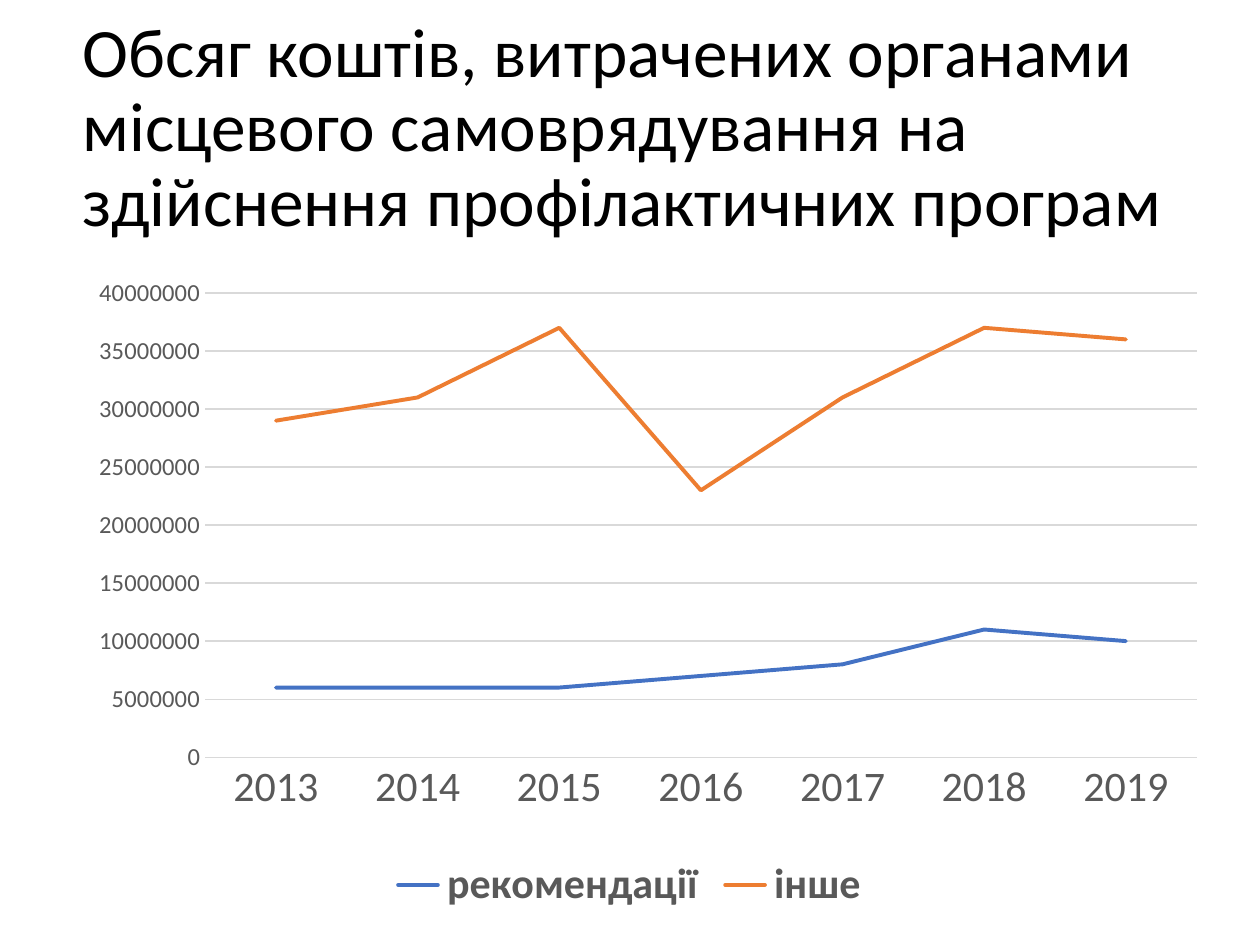
from lxml.etree import SubElement
from pptx import Presentation
from pptx.chart.data import CategoryChartData
from pptx.dml.color import RGBColor
from pptx.enum.chart import XL_CHART_TYPE, XL_LEGEND_POSITION, XL_TICK_MARK
from pptx.enum.text import MSO_ANCHOR, PP_ALIGN
from pptx.oxml.ns import qn
from pptx.util import Emu, Pt

PX_PER_INCH = 126
FONT = "Calibri"
BLACK, GREY, LIGHT_GREY = "000000", "595959", "D9D9D9"

YEARS = [str(year) for year in range(2013, 2020)]
# Name, colour and yearly spending in millions
SPENDING = [
    ("рекомендації", "4472C4", [6, 6, 6, 7, 8, 11, 10]),
    ("інше", "ED7D31", [29, 31, 37, 23, 31, 37, 36]),
]


def px(length):
    return Emu(round(length * 914400 / PX_PER_INCH))


def color(value):
    return RGBColor.from_string(value)


class SlideBuilder:
    def __init__(self, presentation):
        self.slide = presentation.slides.add_slide(presentation.slide_layouts[6])

    def style_font(self, font, size, value, bold=False):
        font.name = FONT
        font.size = Pt(size)
        font.bold = bold
        font.color.rgb = color(value)

    def style_line(self, line, value, width):
        line.color.rgb = color(value)
        line.width = Pt(width)

    def add_title(self, text, left, top, width, height):
        shape = self.slide.shapes.add_textbox(*map(px, (left, top, width, height)))
        text_frame = shape.text_frame
        text_frame.word_wrap = True
        text_frame.vertical_anchor = MSO_ANCHOR.MIDDLE
        text_frame.text = text
        paragraph = text_frame.paragraphs[0]
        paragraph.alignment = PP_ALIGN.LEFT
        paragraph.line_spacing = 0.9
        self.style_font(paragraph.runs[0].font, 39.6, BLACK)

    def add_line_chart(self, categories, series_list, left, top, width, height):
        data = CategoryChartData(number_format="General")
        data.categories = categories
        for name, _, millions in series_list:
            data.add_series(name, [value * 1_000_000 for value in millions])
        chart = self.slide.shapes.add_chart(
            XL_CHART_TYPE.LINE, *map(px, (left, top, width, height)), data
        ).chart
        chart.has_title = False
        self.style_font(chart.font, 14, BLACK)
        plot = chart.plots[0]
        plot.vary_by_categories = False
        for series, (_, value, _) in zip(plot.series, series_list):
            series.smooth = False
            self.style_line(series.format.line, value, 2.25)
            # Round line ends
            next(series._element.iter(qn("a:ln"))).set("cap", "rnd")
        self.style_axes(chart)
        self.add_legend(chart)
        self.place_plot(chart, x=0.132, y=0.063, w=0.86, h=0.695)

    def style_axes(self, chart):
        for axis, size in ((chart.category_axis, 24), (chart.value_axis, 14)):
            axis.major_tick_mark = axis.minor_tick_mark = XL_TICK_MARK.NONE
            self.style_font(axis.tick_labels.font, size, GREY)
        self.style_line(chart.category_axis.format.line, LIGHT_GREY, 0.75)
        value_axis = chart.value_axis
        value_axis.minimum_scale = 0
        value_axis.maximum_scale = 40_000_000
        value_axis.major_unit = 5_000_000
        value_axis.format.line.fill.background()
        value_axis.has_major_gridlines = True
        self.style_line(value_axis.major_gridlines.format.line, LIGHT_GREY, 0.75)

    def add_legend(self, chart):
        chart.has_legend = True
        chart.legend.position = XL_LEGEND_POSITION.BOTTOM
        chart.legend.include_in_layout = False
        self.style_font(chart.legend.font, 24, GREY, bold=True)

    def place_plot(self, chart, **fractions):
        # A fixed inner plot area is only reachable through XML
        plot_area = chart.plots[0]._element.getparent()
        layout = plot_area.find(qn("c:layout"))
        if layout is None:
            layout = SubElement(plot_area, qn("c:layout"))
            plot_area.insert(0, layout)
        manual = SubElement(layout, qn("c:manualLayout"))
        settings = {"layoutTarget": "inner", "xMode": "edge", "yMode": "edge", **fractions}
        for tag, value in settings.items():
            SubElement(manual, qn(f"c:{tag}")).set("val", str(value))


def main():
    presentation = Presentation()
    presentation.slide_width = px(1260)
    presentation.slide_height = px(945)
    builder = SlideBuilder(presentation)

    # Heading
    builder.add_title(
        "Обсяг коштів, витрачених органами місцевого самоврядування "
        "на здійснення профілактичних програм",
        70, 26, 1138, 207,
    )

    # Spending by year
    builder.add_line_chart(YEARS, SPENDING, 53, 251, 1153, 668)

    presentation.save("out.pptx")


if __name__ == "__main__":
    main()
